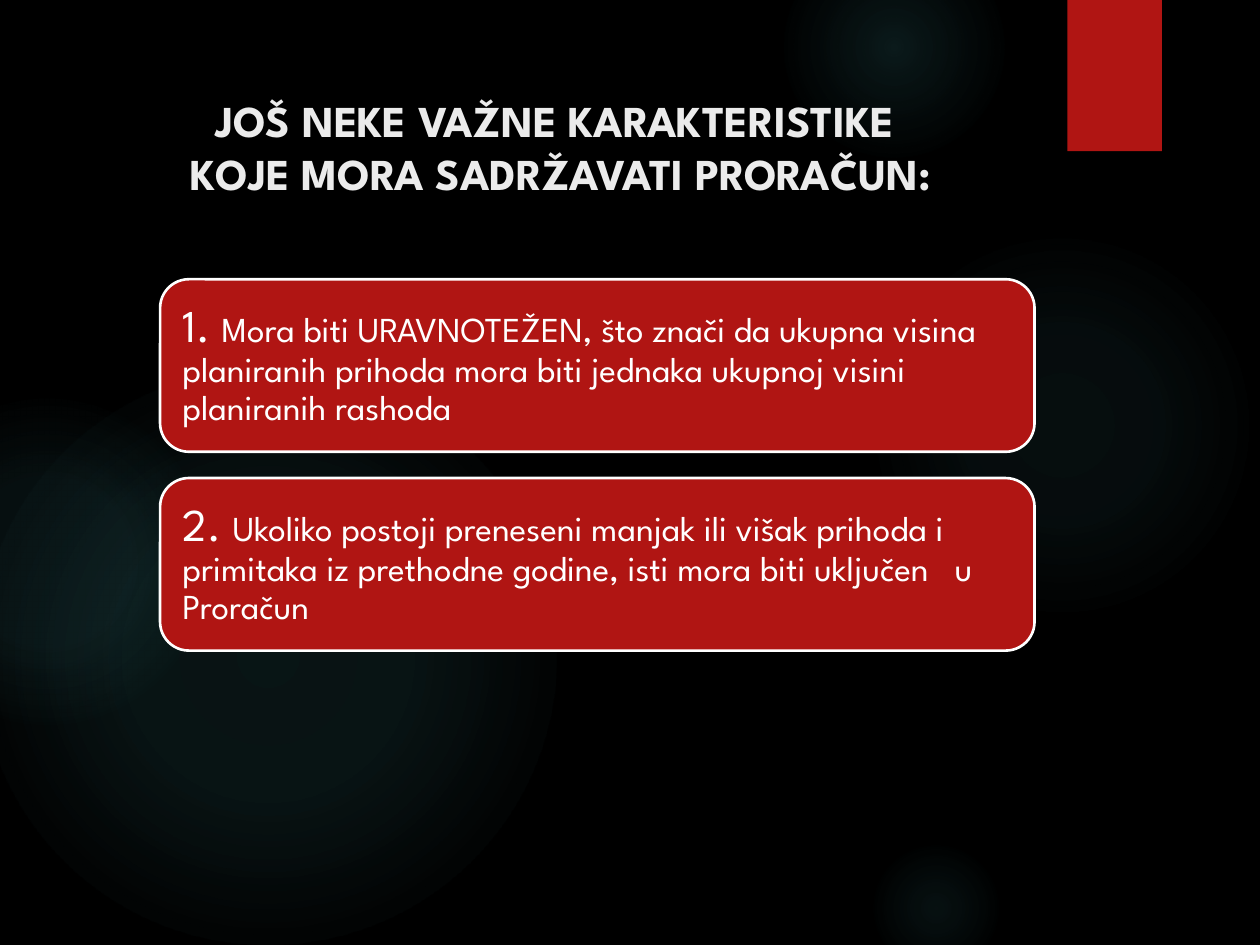
from lxml.etree import SubElement
from pptx import Presentation
from pptx.dml.color import RGBColor
from pptx.enum.shapes import MSO_SHAPE
from pptx.enum.text import MSO_ANCHOR, MSO_AUTO_SIZE, PP_ALIGN
from pptx.oxml import parse_xml
from pptx.oxml.ns import nsdecls, qn
from pptx.util import Pt

BLACK = RGBColor(0x00, 0x00, 0x00)
RED = RGBColor(0xB0, 0x15, 0x13)
TEAL = RGBColor(0x50, 0xB9, 0xC1)
WHITE = RGBColor(0xFF, 0xFF, 0xFF)
PALE = RGBColor(0xEB, 0xEB, 0xEB)

# Left, top, diameter, then (position %, opacity %) of each gradient stop
GLOWS = [
    (496, 132, 222, [(0, 7), (36, 6), (69, 0)]),
    (448, -36, 126, [(0, 14), (36, 7), (73, 0)]),
    (496, 480, 78, [(0, 9), (36, 5), (66, 0)]),
    (-12, 210, 330, [(0, 11), (36, 10), (75, 0)]),
    (-66, 228, 186, [(0, 8), (36, 8), (72, 0)]),
]
TITLE = "JOŠ NEKE VAŽNE KARAKTERISTIKE \vKOJE MORA SADRŽAVATI PRORAČUN:"
RULES = [
    "Mora biti URAVNOTEŽEN, što znači da ukupna visina planiranih prihoda "
    "mora biti jednaka ukupnoj visini planiranih rashoda",
    "Ukoliko postoji preneseni manjak ili višak prihoda i primitaka iz "
    "prethodne godine, isti mora biti uključen   u Proračun",
]


def apply(target, values):
    for name, value in values.items():
        setattr(target, name, value)


class SlideBuilder:
    font_name = "League Spartan"

    def __init__(self, page):
        self.page = page

    def shape(self, kind, left, top, width, height):
        box = self.page.shapes.add_shape(
            kind, Pt(left), Pt(top), Pt(width), Pt(height))
        box.shadow.inherit = False
        box.line.fill.background()
        return box

    def style(self, span, size, color, bold=False):
        apply(span.font, {"name": self.font_name, "size": Pt(size), "bold": bold})
        span.font.color.rgb = color

    def glow(self, left, top, diameter, stops):
        circle = self.shape(MSO_SHAPE.OVAL, left, top, diameter, diameter)
        stop_xml = "".join(
            f'<a:gs pos="{position * 1000}"><a:srgbClr val="{TEAL}">'
            f'<a:alpha val="{opacity * 1000}"/></a:srgbClr></a:gs>'
            for position, opacity in stops)
        gradient = parse_xml(
            f'<a:gradFill {nsdecls("a")}><a:gsLst>{stop_xml}</a:gsLst>'
            '<a:path path="circle"><a:fillToRect l="50000" t="50000" '
            'r="50000" b="50000"/></a:path></a:gradFill>')
        circle._element.spPr.find(qn("a:prstGeom")).addnext(gradient)

    def ribbon(self, left, top, width, height):
        band = self.shape(MSO_SHAPE.RECTANGLE, left, top, width, height)
        band.fill.solid()
        band.fill.fore_color.rgb = RED
        effects = band._element.spPr.find(qn("a:effectLst"))
        shadow = SubElement(effects, qn("a:outerShdw"), blurRad=str(Pt(3)),
                            dist=str(Pt(2)), dir="5400000", rotWithShape="0")
        color = SubElement(shadow, qn("a:srgbClr"), val=str(BLACK))
        SubElement(color, qn("a:alpha"), val="45000")

    def title(self, text, left, top, width, height):
        box = self.page.shapes.title
        apply(box, {"left": Pt(left), "top": Pt(top),
                    "width": Pt(width), "height": Pt(height)})
        # Bring the title in front of the glows
        self.page.shapes._spTree.append(box._element)
        frame = box.text_frame
        frame.text = text
        apply(frame, {"vertical_anchor": MSO_ANCHOR.TOP, "word_wrap": True,
                      "auto_size": MSO_AUTO_SIZE.NONE})
        para = frame.paragraphs[0]
        para.alignment = PP_ALIGN.CENTER
        for span in para.runs:
            self.style(span, 25.2, PALE, bold=True)

    def card(self, number, text, left, top, width, height):
        box = self.shape(MSO_SHAPE.ROUNDED_RECTANGLE, left, top, width, height)
        box.fill.solid()
        box.fill.fore_color.rgb = RED
        box.line.color.rgb = WHITE
        box.line.width = Pt(1.5)
        frame = box.text_frame
        apply(frame, {"word_wrap": True, "vertical_anchor": MSO_ANCHOR.MIDDLE})
        apply(frame, {f"margin_{side}": Pt(8)
                      for side in ("left", "top", "right", "bottom")})
        para = frame.paragraphs[0]
        apply(para, {"alignment": PP_ALIGN.LEFT, "line_spacing": 0.9})
        for words, size in ((f"{number}. ", 26), (text, 20)):
            span = para.add_run()
            span.text = words
            self.style(span, size, WHITE)


def main():
    deck = Presentation()
    deck.slide_width, deck.slide_height = Pt(720), Pt(540)
    page = deck.slides.add_slide(deck.slide_layouts[5])
    page.background.fill.solid()
    page.background.fill.fore_color.rgb = BLACK
    builder = SlideBuilder(page)

    # Backdrop
    for glow in GLOWS:
        builder.glow(*glow)
    builder.ribbon(610, 0, 54, 86.4)

    # Heading
    builder.title(TITLE, 70.6, 49.7, 499.7, 63.4)

    # Numbered rules, stacked with an equal gap
    height, gap = 98.6, 15
    for index, rule in enumerate(RULES):
        builder.card(index + 1, rule, 91.5, 159.6 + index * (height + gap),
                     499.7, height)

    deck.save("out.pptx")


if __name__ == "__main__":
    main()
